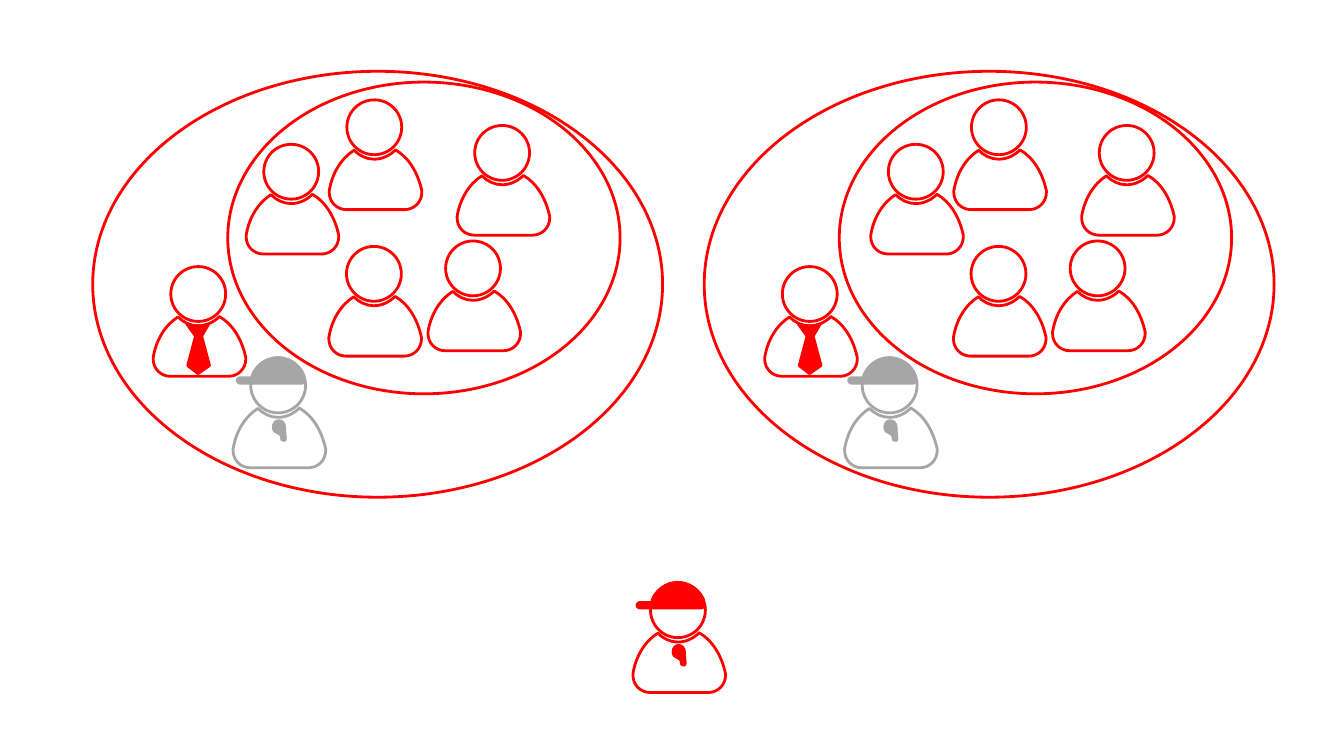
from pptx import Presentation
from pptx import util as u
from pptx.dml import color
from pptx.enum import shapes as s
from pptx.oxml import ns

Pt = u.Pt
RED, GREY = "FF0000", "A6A6A6"
OUTLINE = {"width": Pt(1.5)}

# Figure geometry in points from the figure's top left corner;
# a pair is a straight step, six numbers are a Bezier curve
HEAD = (9.4, 0.2, 29.4, 29.4)
BRIM = (2.2, 10.8, 36, 2.9)
BODY = [(49.6, 49), (47.5, 39, 42.5, 31, 35.5, 27), (32.5, 30, 28.5, 32, 24, 32),
        (20, 32, 16, 30, 13.3, 27.2), (6.5, 31.5, 1.5, 39.5, 0, 49), (0, 49.7),
        (0, 55, 4, 59, 9.4, 59), (40.3, 59), (45.5, 59, 49.6, 55, 49.6, 49.7)]
TIE = [(18, 31), (22, 32.4, 26, 32.4, 29.8, 31), (26, 37.5), (30.2, 53.3),
       (24, 57.6), (18.5, 53.3), (22.7, 37.5)]
CAP = [(24, 0), (30.2, 0, 36, 4.3, 37.9, 9.7), (10.2, 9.7), (12.2, 4.3, 17.6, 0, 24, 0)]
WHISTLE = [(27.6, 37.2), (27.6, 35.2, 26.1, 33.8, 24.5, 33.8),
           (22.8, 33.8, 21.5, 35.2, 21.5, 37.2), (21.5, 39, 22.5, 40.2, 23.9, 40.4),
           (25.4, 40.7, 26, 41.8, 26, 43.2), (26, 44), (27.7, 44.4), (28, 43.3), (27.6, 38.6)]

# Places within a team's box
MANAGER, COACH = (32.4, 104.4), (75.2, 153.4)
PLAYERS = [(82.2, 38.9), (126.5, 93.6), (179.6, 90.7), (126.7, 15.1), (195.2, 28.8)]
TEAM_SIZE = (305.3, 228.2)


def rgb(hex_code):
    return color.RGBColor.from_string(hex_code)


def style(part, line, fill=None):
    part.shadow.inherit = False
    if fill:
        part.fill.solid()
        part.fill.fore_color.rgb = rgb(fill)
    else:
        part.fill.background()
    part.line.color.rgb = rgb(line)
    for name, value in OUTLINE.items():
        setattr(part.line, name, value)


def preset(parent, kind, box, line, fill=None):
    part = parent.add_shape(kind, *map(Pt, box))
    style(part, line, fill)
    return part


def bend(part, steps):
    """Join the three straight segments of each curved step into one Bezier curve."""
    segments = iter(list(part._element.iter(ns.qn("a:lnTo"))))
    for step in steps[1:]:
        pieces = [next(segments) for _ in range(len(step) // 2)]
        if len(pieces) == 1:
            continue
        curve = pieces[0].makeelement(ns.qn("a:cubicBezTo"))
        pieces[0].addprevious(curve)
        for piece in pieces:
            curve.append(piece[0])
            piece.getparent().remove(piece)


def outline(parent, left, top, steps, line, fill=None):
    points = [(Pt(left + step[i]), Pt(top + step[i + 1]))
              for step in steps for i in range(0, len(step), 2)]
    builder = parent.build_freeform(*points[0], scale=1.0)
    builder.add_line_segments(points[1:], close=True)
    part = builder.convert_to_shape()
    bend(part, steps)
    style(part, line, fill)


def person(parent, left, top, hue=RED):
    outline(parent, left, top, BODY, hue)
    x, y, width, height = HEAD
    preset(parent, s.MSO_SHAPE.OVAL, (left + x, top + y, width, height), hue)


def manager(parent, left, top):
    person(parent, left, top)
    outline(parent, left, top, TIE, RED, RED)


def coach(parent, left, top, hue):
    figure = parent.add_group_shape().shapes
    person(figure, left, top, hue)
    outline(figure, left, top, CAP, hue, hue)
    x, y, width, height = BRIM
    brim = preset(figure, s.MSO_SHAPE.ROUNDED_RECTANGLE,
                  (left + x, top + y, width, height), hue, hue)
    brim.adjustments[0] = 0.5
    outline(figure, left, top, WHISTLE, hue, hue)


def team(parent, left, top, width, height, player_shift=0):
    # Staff
    manager(parent, left + MANAGER[0], top + MANAGER[1])
    coach(parent, left + COACH[0], top + COACH[1], GREY)
    # Players
    for x, y in PLAYERS:
        person(parent, left + x + player_shift, top + y)
    # Circle of players, then circle of the whole team
    preset(parent, s.MSO_SHAPE.OVAL, (left + 72.3, top + 5.8, 210.2, 167), RED)
    preset(parent, s.MSO_SHAPE.OVAL, (left, top, width, height), RED)


def main():
    deck = Presentation()
    deck.slide_width, deck.slide_height = Pt(720), Pt(405)
    canvas = deck.slides.add_slide(deck.slide_layouts[6]).shapes

    # Two teams side by side
    team(canvas, 49.7, 38.2, *TEAM_SIZE)
    team(canvas, 377.3, 38.2, *TEAM_SIZE, player_shift=7)
    # Shared coach below
    coach(canvas, 339.1, 312, RED)

    deck.save("out.pptx")


if __name__ == "__main__":
    main()
